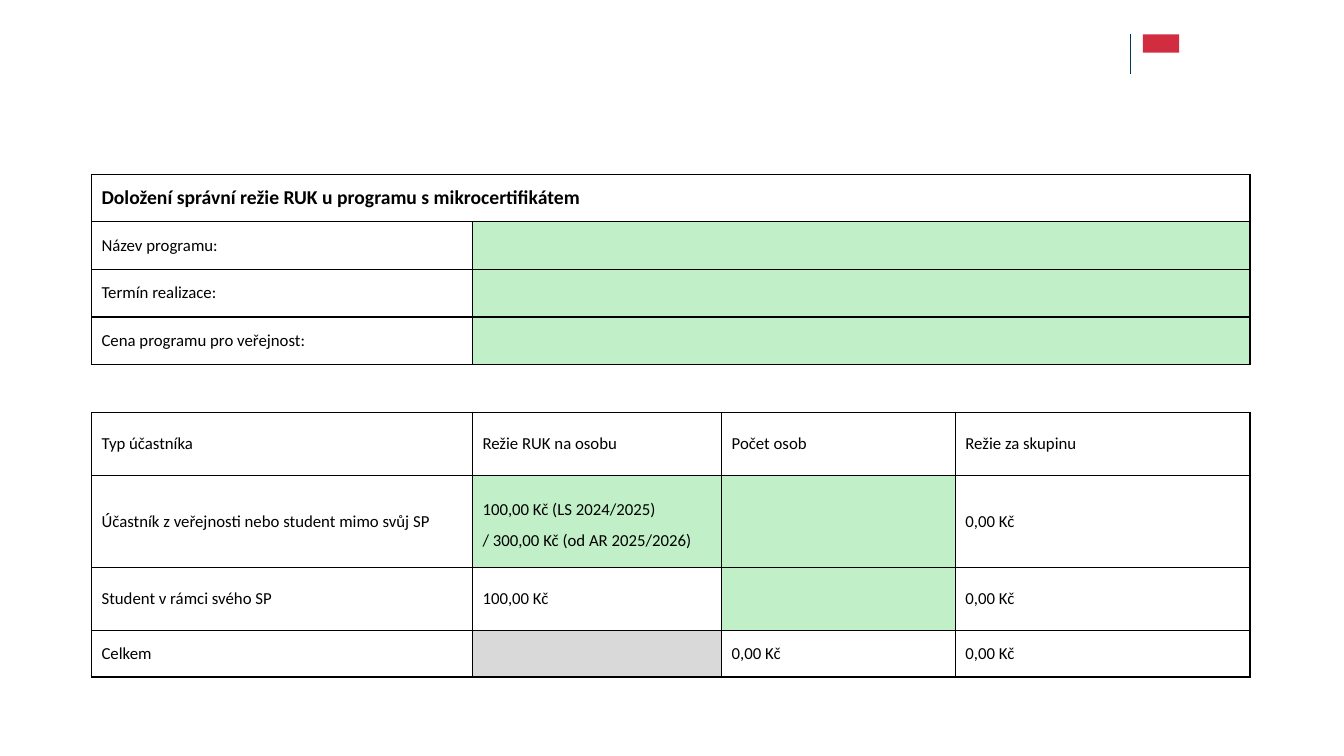
import pptx
import pptx.util
import pptx.dml.color
import pptx.enum.shapes
import pptx.enum.text
import pptx.oxml
import pptx.oxml.ns
import lxml.etree

Cm = pptx.util.Cm
Pt = pptx.util.Pt
RGB = pptx.dml.color.RGBColor.from_string

colors = {"ink": "000000", "green": "C1EFC7", "grey": "D9D9D9", "navy": "003656", "red": "D22C40"}


def write(cell, text, size=12, bold=False, color="ink", gap=0):
    frame = cell.text_frame
    for i, line in enumerate(text.split("\n")):
        para = frame.paragraphs[0] if i == 0 else frame.add_paragraph()
        para._p.get_or_add_pPr().set("marL", str(Cm(0.25)))
        if i:
            para.space_before = Pt(gap)
        run = para.add_run()
        run.text = line
        run.font.name = "Calibri"
        run.font.size = Pt(size)
        run.font.bold = bold
        run.font.color.rgb = RGB(colors[color])


def border(cell, widths):
    props = cell._tc.get_or_add_tcPr()
    for i, (side, width) in enumerate(zip("LRTB", widths)):
        line = lxml.etree.Element(pptx.oxml.ns.qn("a:ln" + side), w=str(Pt(width)))
        if width:
            fill = lxml.etree.SubElement(line, pptx.oxml.ns.qn("a:solidFill"))
            lxml.etree.SubElement(fill, pptx.oxml.ns.qn("a:srgbClr"), val=colors["ink"])
        else:
            lxml.etree.SubElement(line, pptx.oxml.ns.qn("a:noFill"))
        props.insert(i, line)


deck = pptx.Presentation()
deck.slide_width = Cm(33.87)
deck.slide_height = Cm(19.05)
slide = deck.slides.add_slide(deck.slide_layouts[6])

rule = slide.shapes.add_connector(
    pptx.enum.shapes.MSO_CONNECTOR.STRAIGHT, Cm(28.48), Cm(0.86), Cm(28.48), Cm(1.87))
rule.line.color.rgb = RGB(colors["navy"])
rule.line.width = Pt(0.53)
lxml.etree.SubElement(rule._element.spPr, pptx.oxml.ns.qn("a:effectLst"))

badge = slide.shapes.add_shape(
    pptx.enum.shapes.MSO_SHAPE.RECTANGLE, Cm(28.8), Cm(0.87), Cm(0.92), Cm(0.46))
badge.shadow.inherit = False
badge.fill.solid()
badge.fill.fore_color.rgb = RGB(colors["red"])
badge.line.fill.background()

rows = [
    ["Doložení správní režie RUK u programu s mikrocertifikátem", "", "", ""],
    ["Název programu:", "", "", ""],
    ["Termín realizace:", "", "", ""],
    ["Cena programu pro veřejnost:", "", "", ""],
    ["", "", "", ""],
    ["Typ účastníka", "Režie RUK na osobu", "Počet osob", "Režie za skupinu"],
    ["Účastník z veřejnosti nebo student mimo svůj SP",
     "100,00 Kč (LS 2024/2025)\n/ 300,00 Kč (od AR 2025/2026)", "", "0,00 Kč"],
    ["Student v rámci svého SP", "100,00 Kč", "", "0,00 Kč"],
    ["Celkem", "", "0,00 Kč", "0,00 Kč"],
]
wide = [9.6, 6.28, 5.89, 7.42]
high = [1.2] * 5 + [1.59, 2.32, 1.59, 1.17]
fills = {(r, 1): "green" for r in (1, 2, 3, 6)}
fills.update({(6, 2): "green", (7, 2): "green", (8, 1): "grey"})
gap_row = 4

table = slide.shapes.add_table(
    len(rows), len(wide), Cm(2.31), Cm(4.39), Cm(sum(wide)), Cm(sum(high))).table
table.first_row = False
table.horz_banding = False
for col, size in zip(table.columns, wide):
    col.width = Cm(size)
for row, size in zip(table.rows, high):
    row.height = Cm(size)

for r in range(gap_row + 1):
    start = 0 if r in (0, gap_row) else 1
    table.cell(r, start).merge(table.cell(r, 3))

for r, row in enumerate(rows):
    for c, text in enumerate(row):
        cell = table.cell(r, c)
        cell.margin_left = cell.margin_right = cell.margin_top = cell.margin_bottom = 0
        cell.vertical_anchor = pptx.enum.text.MSO_ANCHOR.MIDDLE
        if (r, c) in fills:
            cell.fill.solid()
            cell.fill.fore_color.rgb = RGB(colors[fills[r, c]])
        else:
            cell.fill.background()
        if "\n" in text:
            cell.margin_top = Cm(0.2)
        if text:
            write(cell, text, size=14 if r == 0 else 12, bold=r == 0, gap=7.2)
        inner = 0.5 if r > gap_row else 1
        left = 1 if c == 0 else inner
        right = 1 if c == 3 else inner
        if r == gap_row:
            left = right = 0
        border(cell, [left, right, 0.5 if r == 7 else 1, 0.5 if r == 6 else 1])

deck.save("out.pptx")
